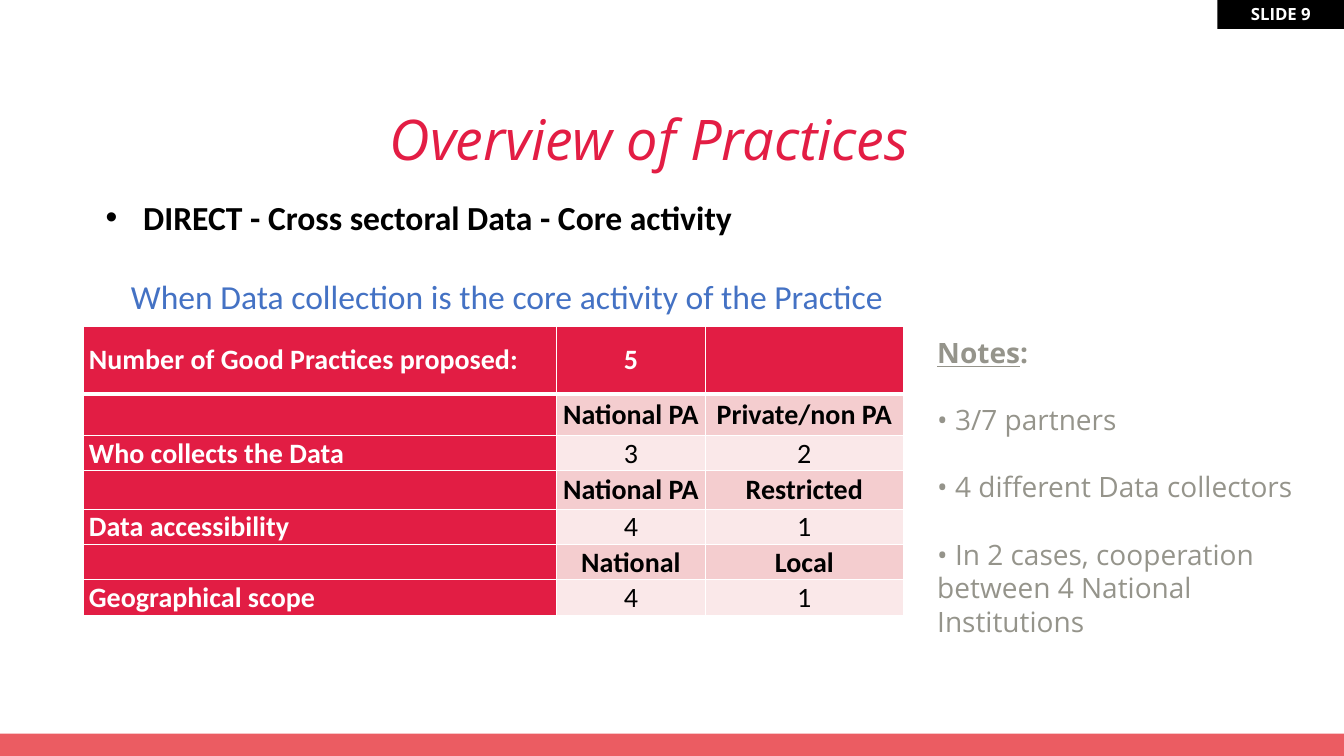
"""Build the slide giving an overview of practices for cross-sectoral data."""
from dataclasses import dataclass

from lxml.etree import SubElement
from pptx import Presentation
from pptx.dml.color import RGBColor
from pptx.enum.shapes import MSO_SHAPE
from pptx.enum.text import MSO_ANCHOR, PP_ALIGN
from pptx.oxml import parse_xml
from pptx.oxml.ns import nsdecls, qn
from pptx.util import Cm, Pt


@dataclass(frozen=True)
class Theme:
    title: str = "E31D44"
    header: str = "E21D44"
    label_row: str = "F4CDCF"
    value_row: str = "FAE8E9"
    footer: str = "EB5C62"
    subtitle: str = "4472C4"
    notes: str = "95948B"
    black: str = "000000"
    white: str = "FFFFFF"
    display_font: str = "Open Sans"
    body_font: str = "Calibri"
    title_size: int = 40
    heading_size: int = 24
    body_size: int = 20
    badge_size: int = 12


theme = Theme()


def add_run(paragraph, text, color, **formats):
    run = paragraph.add_run()
    run.text = text
    for name, value in formats.items():
        setattr(run.font, name, value)
    run.font.color.rgb = RGBColor.from_string(color)


def add_text_frame(left, top, width, height):
    frame = slide.shapes.add_textbox(Cm(left), Cm(top), Cm(width), Cm(height)).text_frame
    frame.word_wrap = True
    return frame


presentation = Presentation()
presentation.slide_width = Cm(33.87)
presentation.slide_height = Cm(19.05)
slide = presentation.slides.add_slide(presentation.slide_layouts[6])

bars = [
    ((0, 18.49, 33.87, 0.61), theme.footer, ""),
    ((30.68, -0.03, 3.2, 0.76), theme.black, "SLIDE 9"),
]
for position, color, text in bars:
    shape = slide.shapes.add_shape(MSO_SHAPE.RECTANGLE, *map(Cm, position))
    shape.shadow.inherit = False
    shape.fill.solid()
    shape.fill.fore_color.rgb = RGBColor.from_string(color)
    shape.line.fill.background()
    if text:
        shape.text_frame.vertical_anchor = MSO_ANCHOR.MIDDLE
        paragraph = shape.text_frame.paragraphs[0]
        paragraph.alignment = PP_ALIGN.CENTER
        add_run(paragraph, text, theme.white, name=theme.display_font,
                size=Pt(theme.badge_size), bold=True)

paragraph = add_text_frame(2.41, 2.16, 27.91, 2.16).paragraphs[0]
paragraph.alignment = PP_ALIGN.CENTER
paragraph.line_spacing = 1.2
add_run(paragraph, "Overview of Practices", theme.title, name=theme.display_font,
        size=Pt(theme.title_size), italic=True)

heading_frame = add_text_frame(2.41, 4.83, 26.26, 3.84)
heading_format = {"name": theme.body_font, "size": Pt(theme.heading_size)}
paragraph = heading_frame.paragraphs[0]
properties = paragraph._p.get_or_add_pPr()
properties.set("marL", str(Cm(0.95)))
properties.set("indent", str(-Cm(0.95)))
SubElement(properties, qn("a:buFont")).set("typeface", "Arial")
SubElement(properties, qn("a:buChar")).set("char", "•")
add_run(paragraph, "DIRECT - Cross sectoral Data - Core activity", theme.black,
        bold=True, **heading_format)
paragraph = heading_frame.add_paragraph()
paragraph._p.get_or_add_pPr().set("marL", str(Cm(0.64)))
paragraph.space_before = Pt(27.6)
add_run(paragraph, "When Data collection is the core activity of the Practice",
        theme.subtitle, **heading_format)

practice_rows = [
    ("Number of Good Practices proposed:", "5", ""),
    ("", "National PA", "Private/non PA"),
    ("Who collects the Data", "3", "2"),
    ("", "National PA", "Restricted"),
    ("Data accessibility", "4", "1"),
    ("", "National", "Local"),
    ("Geographical scope", "4", "1"),
]
column_widths = [11.91, 3.76, 4.98]
row_heights = [1.7, 1.04, 0.89, 0.97, 0.89, 0.89, 0.89]
table = slide.shapes.add_table(
    len(row_heights), len(column_widths), Cm(2.11), Cm(8.23),
    Cm(sum(column_widths)), Cm(sum(row_heights))).table
table.horz_banding = False
for column, width in zip(table.columns, column_widths):
    column.width = Cm(width)
for row, height in zip(table.rows, row_heights):
    row.height = Cm(height)

for row_index, texts in enumerate(practice_rows):
    for column_index, text in enumerate(texts):
        is_header = row_index == 0 or column_index == 0
        is_label = row_index % 2 == 1
        fill = theme.header if is_header else theme.label_row if is_label else theme.value_row
        cell = table.cell(row_index, column_index)
        cell_format = {
            "margin_left": Cm(0.13), "margin_right": Cm(0.13),
            "margin_top": 0, "margin_bottom": 0,
            "vertical_anchor": MSO_ANCHOR.MIDDLE if row_index in (0, 1, 3) else MSO_ANCHOR.BOTTOM,
        }
        for name, value in cell_format.items():
            setattr(cell, name, value)
        cell.fill.solid()
        cell.fill.fore_color.rgb = RGBColor.from_string(fill)
        for position, side in enumerate(("lnL", "lnR", "lnT", "lnB")):
            thick = (row_index, side) in ((0, "lnB"), (1, "lnT"))
            cell._tc.get_or_add_tcPr().insert(position, parse_xml(
                f'<a:{side} {nsdecls("a")} w="{Pt(3 if thick else 1)}"><a:solidFill>'
                f'<a:srgbClr val="{theme.white}"/></a:solidFill></a:{side}>'))
        if text:
            paragraph = cell.text_frame.paragraphs[0]
            paragraph.alignment = PP_ALIGN.CENTER if column_index else PP_ALIGN.LEFT
            add_run(paragraph, text, theme.white if is_header else theme.black,
                    name=theme.body_font, size=Pt(theme.body_size), bold=is_header or is_label)

notes_frame = add_text_frame(23.37, 8.33, 10.72, 8.97)
notes_format = {"name": theme.display_font, "size": Pt(theme.body_size)}
paragraph = notes_frame.paragraphs[0]
add_run(paragraph, "Notes", theme.notes, bold=True, underline=True, **notes_format)
add_run(paragraph, ":", theme.notes, bold=True, **notes_format)
notes = [
    "• 3/7 partners",
    "• 4 different Data collectors",
    "• In 2 cases, cooperation between 4 National Institutions",
]
for note in notes:
    paragraph = notes_frame.add_paragraph()
    paragraph.space_before = Pt(24)
    add_run(paragraph, note, theme.notes, **notes_format)

presentation.save("out.pptx")
